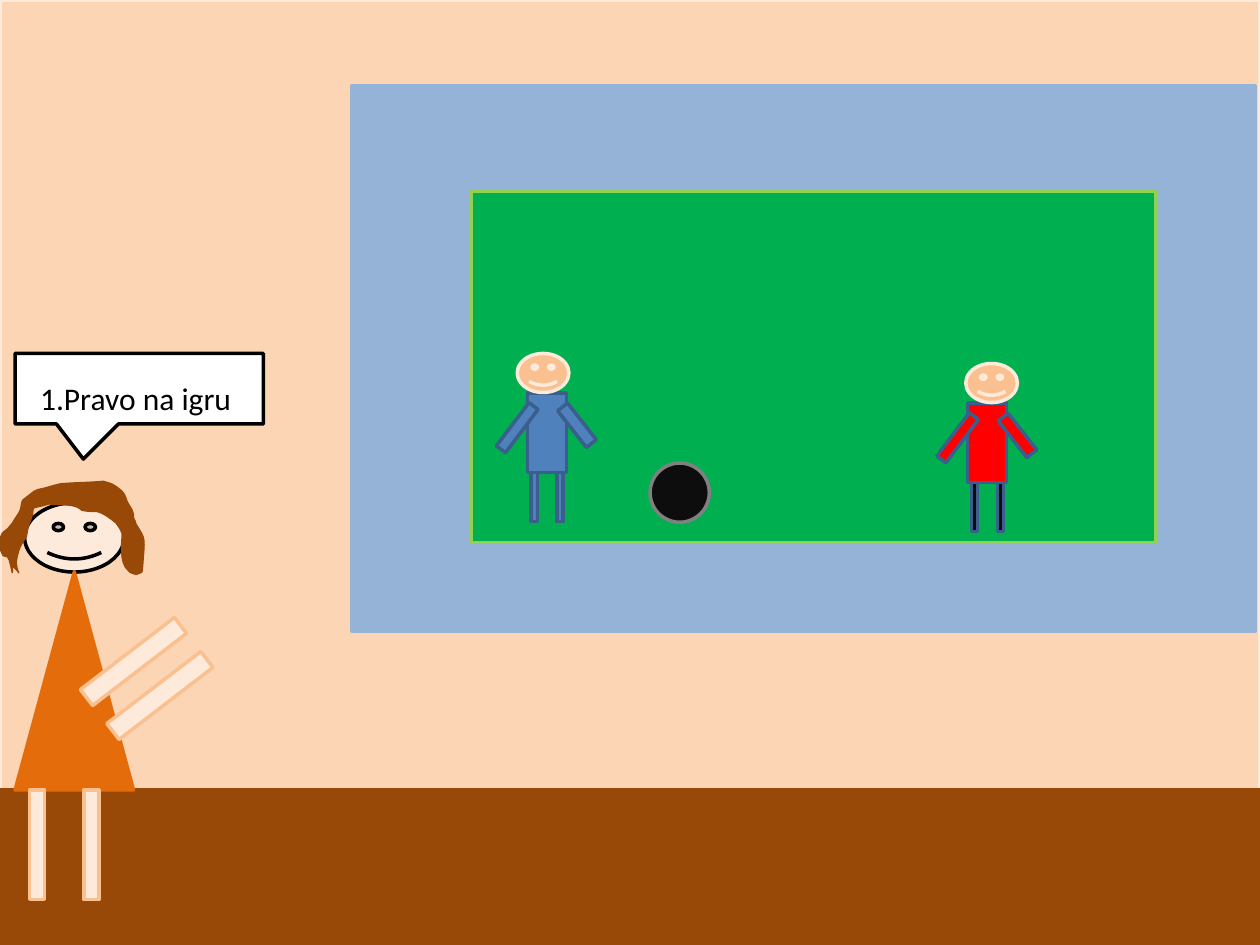
import lxml.etree
import pptx
import pptx.dml.color
import pptx.enum.shapes
import pptx.enum.text
import pptx.oxml.ns
import pptx.util

KIND = pptx.enum.shapes.MSO_SHAPE
CELL = pptx.util.Inches(0.1)
FINE = 100
SKIN, PEACH, BROWN, ORANGE = "FDEADA", "FAC090", "984807", "E46C0A"
BLUE, BLUE_EDGE, RED, BLACK = "4F81BD", "3A5F8C", "FF0000", "0D0D0D"

HAIR_START = (1.5, 45.5)
HAIR_CURVES = [
    ((1.4, 45.2), (1.3, 45), (1.3, 44.7)), ((1.3, 44.4), (1.4, 44), (1.5, 43.7)),
    ((1.6, 43.3), (1.9, 42.9), (2.1, 42.6)), ((2.3, 41.4), (2.2, 42), (2.6, 40.8)),
    ((2.6, 40.6), (2.6, 40.4), (2.7, 40.3)), ((3.6, 40.1), (3.2, 40.2), (3.9, 40)),
    ((4.6, 40.1), (5.3, 40), (6, 40.2)), ((6.2, 40.2), (6.3, 40.4), (6.5, 40.5)),
    ((6.9, 40.6), (7.3, 40.6), (7.7, 40.6)), ((7.9, 40.7), (8.1, 40.7), (8.2, 40.8)),
    ((8.6, 41), (9.2, 41.5), (9.2, 41.5)), ((9.4, 41.8), (9.6, 42), (9.7, 42.4)),
    ((9.7, 42.8), (9.4, 44.7), (10.2, 45.3)), ((10.3, 45.5), (10.6, 45.5), (10.8, 45.6)),
    ((11, 45.5), (11.3, 45.5), (11.3, 45.3)), ((11.5, 42.5), (11.6, 42.9), (10.8, 41.6)),
    ((10.8, 41.5), (10.7, 41.3), (10.6, 41.1)), ((10.6, 40.9), (10.6, 40.7), (10.5, 40.5)),
    ((10.4, 40.3), (10.3, 40.2), (10.2, 40)), ((10, 39.7), (10, 39.3), (9.7, 39)),
    ((9, 38.4), (8.9, 38.4), (8.2, 38.2)), ((7.1, 38.3), (6, 38.3), (4.8, 38.4)),
    ((4.7, 38.4), (4.5, 38.5), (4.4, 38.5)), ((4.1, 38.6), (3.9, 38.6), (3.7, 38.7)),
    ((3.4, 38.8), (3, 38.8), (2.7, 39)), ((2.7, 39), (1.8, 39.7), (1.8, 39.7)),
    ((1.7, 39.9), (1.7, 40.2), (1.6, 40.5)), ((1.5, 40.8), (1.2, 41.1), (1, 41.5)),
    ((0.5, 42.1), (0.8, 41.8), (0.2, 42.3)), ((-0.1, 42.9), (-0.2, 43.2), (0.2, 44)),
    ((0.2, 44.2), (0.5, 44.1), (0.6, 44.2)), ((0.7, 44.4), (0.8, 44.5), (0.8, 44.7)),
    ((1, 45.4), (1, 45.9), (1, 45)),
]


def color(hex_string):
    """Turn a hex string into a colour."""
    return pptx.dml.color.RGBColor.from_string(hex_string)


def bend(shape):
    """Turn each three line segments of an outline into one cubic curve."""
    segments = list(shape.element.iter(pptx.oxml.ns.qn("a:lnTo")))
    for first in range(0, len(segments), 3):
        curve = lxml.etree.Element(pptx.oxml.ns.qn("a:cubicBezTo"))
        segments[first].addprevious(curve)
        for segment in segments[first:first + 3]:
            curve.append(segment[0])
            segment.getparent().remove(segment)


class Scene:
    """Draws on one slide with a grid of 100 columns by 75 rows."""

    def __init__(self, slide, font="Calibri", line_width=2):
        """Keep the slide and the shared style."""
        self.slide, self.font, self.line_width = slide, font, line_width
        self.layer = slide.shapes

    def group(self):
        """Start a group for the elements that follow."""
        self.layer = self.slide.shapes.add_group_shape().shapes

    def ungroup(self):
        """Draw straight on the slide again."""
        self.layer = self.slide.shapes

    def paint(self, shape, fill, line, width):
        """Give a shape its fill and outline."""
        shape.shadow.inherit = False
        shape.fill.solid()
        shape.fill.fore_color.rgb = color(fill)
        shape.line.color.rgb = color(line)
        shape.line.width = pptx.util.Pt(width)
        return shape

    def shape(self, kind, left, top, width, height, fill, line, rotation=0):
        """Add a preset shape."""
        box = [round(cells * CELL) for cells in (left, top, width, height)]
        figure = self.layer.add_shape(kind, *box)
        figure.rotation = rotation
        return self.paint(figure, fill, line, self.line_width)

    def outline(self, start, curves, fill, width):
        """Add a curved outline."""
        points = [(x * FINE, y * FINE) for curve in curves for x, y in curve]
        builder = self.layer.build_freeform(start[0] * FINE, start[1] * FINE, scale=CELL / FINE)
        builder.add_line_segments(points, close=False)
        figure = builder.convert_to_shape()
        bend(figure)
        return self.paint(figure, fill, fill, width)

    def text(self, left, top, width, height, words, size):
        """Add a line of text."""
        box = [round(cells * CELL) for cells in (left, top, width, height)]
        frame = self.layer.add_textbox(*box).text_frame
        frame.word_wrap = True
        frame.auto_size = pptx.enum.text.MSO_AUTO_SIZE.SHAPE_TO_FIT_TEXT
        paragraph = frame.paragraphs[0]
        paragraph.text = words
        paragraph.font.name = self.font
        paragraph.font.size = pptx.util.Pt(size)
        paragraph.font.color.rgb = color("000000")

    def player(self, left, top, shirt, legs, head_shift):
        """Add a player whose shirt starts at the given cell."""
        self.shape(KIND.RECTANGLE, left, top, 3.1, 6.3, shirt, BLUE_EDGE)
        for shift in (2.35, 0.3):
            self.shape(KIND.RECTANGLE, left + shift, top + 6.3, 0.5, 3.9, legs, BLUE_EDGE)
        self.shape(KIND.RECTANGLE, left - 1.25, top + 0.6, 0.9, 4.3, shirt, BLUE_EDGE, 37)
        self.shape(KIND.RECTANGLE, left + 3.45, top + 0.7, 1, 3.7, shirt, BLUE_EDGE, 321.9)
        self.shape(KIND.SMILEY_FACE, left + head_shift, top - 3.15, 4.1, 3.1, PEACH, SKIN)

    def teacher(self):
        """Add the woman with her dress, limbs and hair."""
        self.shape(KIND.SMILEY_FACE, 1.95, 39.9, 7.9, 5.5, SKIN, "000000")
        self.shape(KIND.ISOSCELES_TRIANGLE, 1.2, 45.4, 9.4, 17.3, ORANGE, ORANGE)
        for left, top in ((5.9, 51.7), (8, 54.4)):
            self.shape(KIND.RECTANGLE, left, top, 9.4, 1.6, SKIN, PEACH, 322.5)
        for left in (2.35, 6.65):
            self.shape(KIND.RECTANGLE, left, 62.7, 1.2, 8.7, SKIN, PEACH)
        self.outline(HAIR_START, HAIR_CURVES, BROWN, 0.75)

    def speech(self, words):
        """Add the speech bubble."""
        bubble = self.shape(KIND.RECTANGULAR_CALLOUT, 1.2, 28.05, 19.7, 5.6, "FFFFFF", "000000")
        bubble.adjustments[0], bubble.adjustments[1] = -0.225, 0.998
        self.text(2.2, 29.6, 20.3, 4, words, 18)


def main():
    """Build the classroom scene."""
    deck = pptx.Presentation()
    deck.slide_width, deck.slide_height = 100 * CELL, 75 * CELL
    scene = Scene(deck.slides.add_slide(deck.slide_layouts[6]))

    scene.shape(KIND.RECTANGLE, 0, 0, 100, 75, "FCD5B5", SKIN)
    scene.shape(KIND.RECTANGLE, 0, 62.7, 100, 12.3, BROWN, BROWN)

    scene.group()
    scene.shape(KIND.RECTANGLE, 27.95, 6.8, 71.7, 43.3, "95B3D7", "95B3D7")
    scene.shape(KIND.RECTANGLE, 37.4, 15.15, 54.3, 27.9, "00B050", "92D050")
    scene.player(41.85, 31.2, BLUE, BLUE, -0.8)
    scene.shape(KIND.OVAL, 51.6, 36.75, 4.7, 4.7, BLACK, "808080")
    scene.player(76.8, 32, RED, BLACK, -0.15)

    scene.ungroup()
    scene.teacher()
    scene.group()
    scene.speech("1.Pravo na igru")
    deck.save("out.pptx")


if __name__ == "__main__":
    main()
